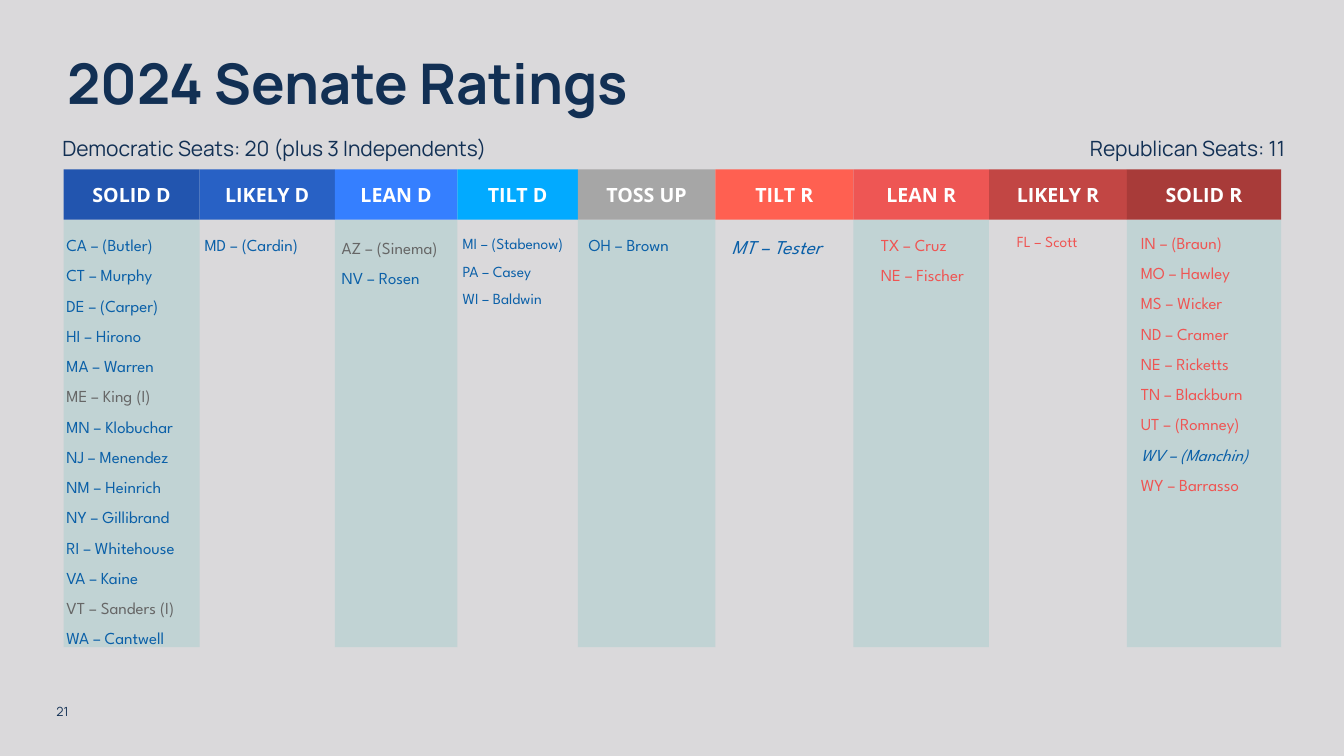
from dataclasses import dataclass

from lxml.etree import SubElement
from pptx import Presentation
from pptx.dml.color import RGBColor
from pptx.enum.shapes import MSO_SHAPE as Shape
from pptx.enum.text import MSO_ANCHOR as Anchor, PP_ALIGN as Align
from pptx.oxml.ns import qn
from pptx.util import Pt


@dataclass(frozen=True)
class Theme:
    background: str = "DAD9DB"
    navy: str = "123054"
    white: str = "FFFFFF"
    panel: str = "36B1B0"
    democrat: str = "0B60A8"
    republican: str = "EF5553"
    independent: str = "666666"
    heading_font: str = "Manrope"
    rating_font: str = "Open Sans"
    senator_font: str = "League Spartan"
    title_size: float = 40
    seats_size: float = 15
    rating_size: float = 14
    featured_size: float = 14
    senator_size: float = 12
    compact_size: float = 11
    number_size: float = 9


theme = Theme()
D, R, I = theme.democrat, theme.republican, theme.independent


def add_run(paragraph, text, font, size, color, bold=False, italic=False):
    run = paragraph.add_run()
    run.text = text
    run.font.name = font
    run.font.size = Pt(size)
    run.font.color.rgb = RGBColor.from_string(color)
    run.font.bold = bold
    run.font.italic = italic


def add_frame(left, top, width, height, inset_x=7.2, inset_y=3.6, anchor=Anchor.TOP):
    box = slide.shapes.add_textbox(Pt(left), Pt(top), Pt(width), Pt(height))
    frame = box.text_frame
    frame.word_wrap = True
    frame.margin_left = frame.margin_right = Pt(inset_x)
    frame.margin_top = frame.margin_bottom = Pt(inset_y)
    frame.vertical_anchor = anchor
    return frame


deck = Presentation()
deck.slide_width, deck.slide_height = Pt(960), Pt(540)
slide = deck.slides.add_slide(deck.slide_layouts[6])
slide.background.fill.solid()
slide.background.fill.fore_color.rgb = RGBColor.from_string(theme.background)

page_number = add_frame(40.3, 491.8, 44.6, 21.6, 0, 0, Anchor.BOTTOM).paragraphs[0]
add_run(page_number, "21", theme.heading_font, theme.number_size, theme.navy)

title = add_frame(41, 36.7, 878.4, 53.3).paragraphs[0]
title.line_spacing = 0.9
add_run(title, "2024 Senate Ratings", theme.heading_font, theme.title_size, theme.navy, bold=True)

for left, align, seats in [
    (44.6, Align.LEFT, "Democratic Seats: 20 (plus 3 Independents)"),
    (596.9, Align.RIGHT, "Republican Seats: 11"),
]:
    seat_count = add_frame(left, 98.6, 321.1, 15.1, 0, 0).paragraphs[0]
    seat_count.alignment = align
    seat_count.line_spacing = 0.9
    add_run(seat_count, seats, theme.heading_font, theme.seats_size, theme.navy)

ratings = [
    ("SOLID D", "2255AF"),
    ("LIKELY D", "2861C5"),
    ("LEAN D", "357FFF"),
    ("TILT D", "02AAFF"),
    ("TOSS UP", "A6A6A6"),
    ("TILT R", "FF6051"),
    ("LEAN R", "EE5654"),
    ("LIKELY R", "C24644"),
    ("SOLID R", "A83B39"),
]
edges = [45.4, 142.6, 239.2, 326.8, 412.8, 511, 609.6, 706.5, 805, 915.1]
header_top, header_bottom, panel_bottom = 121, 157, 462.2

for column, ((rating, color), left, right) in enumerate(zip(ratings, edges, edges[1:])):
    bands = [(header_top, header_bottom, color)]
    if column % 2 == 0:
        bands.insert(0, (header_bottom, panel_bottom, theme.panel))
    for top, bottom, fill in bands:
        band = slide.shapes.add_shape(
            Shape.RECTANGLE, Pt(left), Pt(top), Pt(right - left), Pt(bottom - top))
        band.shadow.inherit = False
        band.line.fill.background()
        band.fill.solid()
        band.fill.fore_color.rgb = RGBColor.from_string(fill)
        if fill == theme.panel:
            tint = next(band.fill._xPr.iter(qn("a:srgbClr")))
            SubElement(tint, qn("a:alpha"), val="15000")
        else:
            header = band.text_frame
            header.margin_left = header.margin_right = Pt(3.6)
            header.vertical_anchor = Anchor.MIDDLE
            header.paragraphs[0].alignment = Align.CENTER
            add_run(header.paragraphs[0], rating, theme.rating_font,
                    theme.rating_size, theme.white, bold=True)

senator_lists = [
    (40.3, 157, 121.7, 326.9, theme.senator_size, [
        ("CA – (Butler)", D), ("CT – Murphy", D), ("DE – (Carper)", D),
        ("HI – Hirono", D), ("MA – Warren", D), ("ME – King (I)", I),
        ("MN – Klobuchar", D), ("NJ – Menendez", D), ("NM – Heinrich", D),
        ("NY – Gillibrand", D), ("RI – Whitehouse", D), ("VA – Kaine", D),
        ("VT – Sanders (I)", I), ("WA – Cantwell", D)]),
    (139, 157, 121.7, 21.6, theme.senator_size, [("MD – (Cardin)", D)]),
    (236.9, 159.1, 121.7, 51.1, theme.senator_size, [("AZ – (Sinema)", I), ("NV – Rosen", D)]),
    (323.3, 157, 121.7, 67, theme.compact_size, [
        ("MI – (Stabenow)", D), ("PA – Casey", D), ("WI – Baldwin", D)]),
    (413.3, 157, 121.7, 28.8, theme.senator_size, [("OH – Brown", D)]),
    (515.5, 155.5, 96.5, 29.5, theme.featured_size, [("MT – Tester", D)]),
    (622.1, 157, 76.3, 94.3, theme.senator_size, [("TX – Cruz", R), ("NE – Fischer", R)]),
    (719.3, 155.5, 76.3, 27.4, theme.compact_size, [("FL – Scott", R)]),
    (807.8, 155.5, 121.7, 269.3, theme.senator_size, [
        ("IN – (Braun)", R), ("MO – Hawley", R), ("MS – Wicker", R),
        ("ND – Cramer", R), ("NE – Ricketts", R), ("TN – Blackburn", R),
        ("UT – (Romney)", R), ("WV – (Manchin)", D), ("WY – Barrasso", R)]),
]
likely_flips = {"MT – Tester", "WV – (Manchin)"}

for left, top, width, height, size, senators in senator_lists:
    roster = add_frame(left, top, width, height)
    for index, (senator, party) in enumerate(senators):
        entry = roster.add_paragraph() if index else roster.paragraphs[0]
        entry.line_spacing = 1.5
        add_run(entry, senator, theme.senator_font, size, party, italic=senator in likely_flips)

deck.save("out.pptx")
